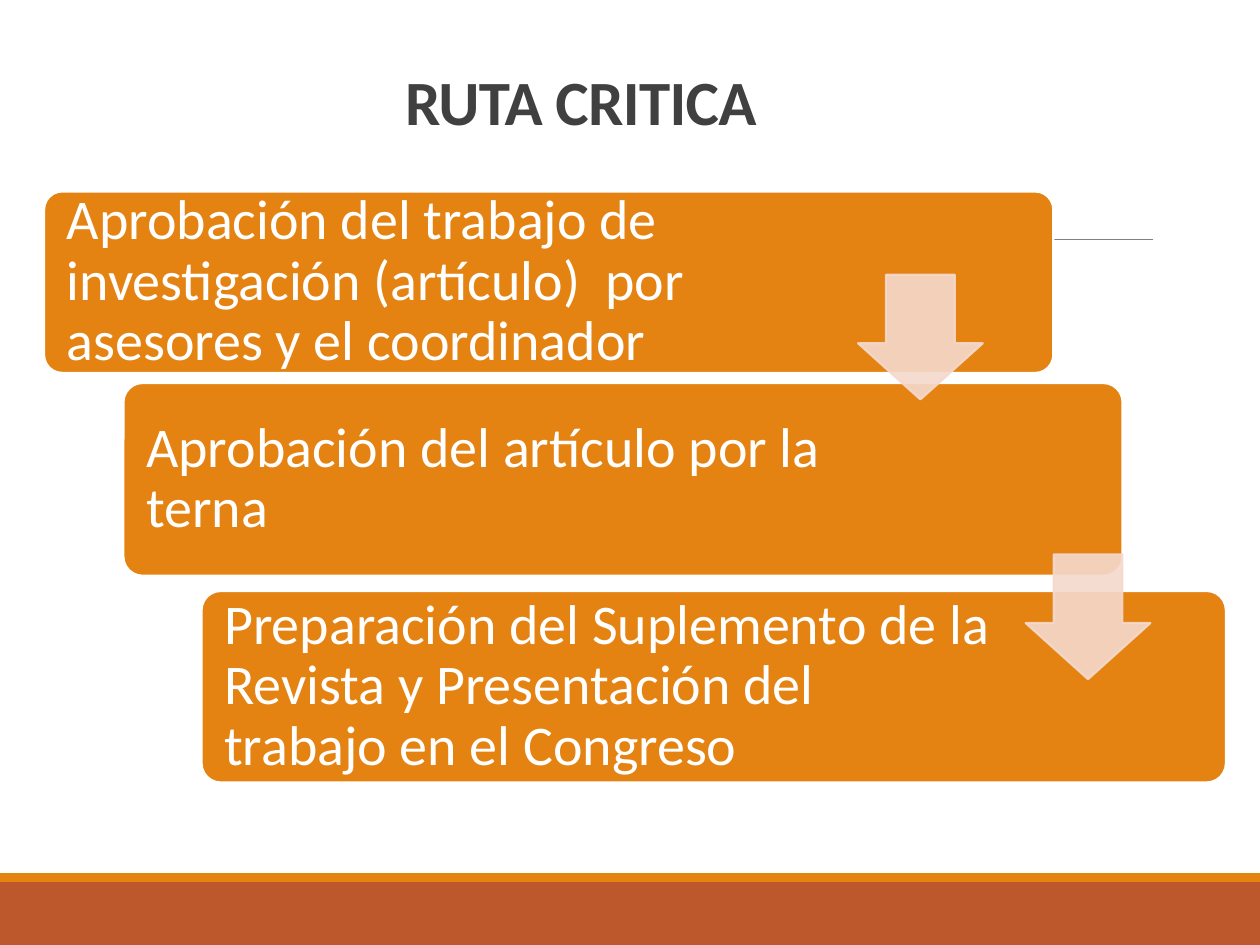
from pptx import Presentation
from pptx.dml.color import RGBColor
from pptx.enum.shapes import MSO_CONNECTOR, MSO_SHAPE
from pptx.enum.text import MSO_ANCHOR, MSO_AUTO_SIZE, PP_ALIGN
from pptx.oxml.ns import qn
from pptx.util import Inches, Pt
from lxml import etree

RECT, ROUNDED, ARROW = MSO_SHAPE.RECTANGLE, MSO_SHAPE.ROUNDED_RECTANGLE, MSO_SHAPE.DOWN_ARROW
STRAIGHT = MSO_CONNECTOR.STRAIGHT
MIDDLE, BOTTOM = MSO_ANCHOR.MIDDLE, MSO_ANCHOR.BOTTOM
CENTER, LEFT = PP_ALIGN.CENTER, PP_ALIGN.LEFT
NO_FIT = MSO_AUTO_SIZE.NONE

COLORS = {
    "orange": "E48312", "rust": "BD582C", "rule": "808080",
    "title": "404040", "white": "FFFFFF", "arrow": "F5D9CC",
}
FONT = "Calibri"
MARGINS = ("margin_left", "margin_top", "margin_right", "margin_bottom")


def rgb(name):
    return RGBColor.from_string(COLORS[name])


class SlideBuilder:
    def __init__(self, slide):
        self.slide = slide
        self.shapes = slide.shapes

    def add_text(self, tf, text, color, frame, para, **font):
        for key, value in frame.items():
            setattr(tf, key, value)
        p = tf.paragraphs[0]
        for key, value in para.items():
            setattr(p, key, value)
        r = p.add_run()
        r.text = text
        for key, value in {"name": FONT, **font}.items():
            setattr(r.font, key, value)
        r.font.color.rgb = rgb(color)
        return r

    def title(self, text, *box):
        sp = self.shapes.title
        sp.left, sp.top, sp.width, sp.height = map(Inches, box)
        frame = {"vertical_anchor": BOTTOM, "word_wrap": True, "auto_size": NO_FIT}
        para = {"alignment": CENTER, "line_spacing": 0.85}
        r = self.add_text(sp.text_frame, text, "title", frame, para, size=Pt(36), bold=True)
        r.font._element.set("spc", "-40")

    def shape(self, kind, box, fill, line=None, adjust=(), opacity=None):
        sp = self.shapes.add_shape(kind, *map(Inches, box))
        sp.shadow.inherit = False
        for i, value in enumerate(adjust):
            sp.adjustments[i] = value
        sp.fill.solid()
        sp.fill.fore_color.rgb = rgb(fill)
        if line:
            sp.line.color.rgb = rgb(line)
            sp.line.width = Pt(1.25)
        else:
            sp.line.fill.background()
        if opacity:
            for color in sp._element.spPr.iter(qn("a:srgbClr")):
                etree.SubElement(color, qn("a:alpha"), val=str(opacity * 1000))
        return sp

    def rule(self, x1, x2, y):
        line = self.shapes.add_connector(STRAIGHT, *map(Inches, (x1, y, x2, y)))
        line.line.color.rgb = rgb("rule")
        line.line.width = Pt(0.5)
        etree.SubElement(line._element.spPr, qn("a:effectLst"))

    def step(self, text, left, top, width, height, text_width):
        self.shape(ROUNDED, (left, top, width, height), "orange", "white", [0.1])
        inset = 0.05
        tb = self.shapes.add_textbox(*map(Inches, (
            left + inset, top + inset, text_width, height - 2 * inset)))
        frame = {"vertical_anchor": MIDDLE, "word_wrap": True, "auto_size": NO_FIT,
                 **dict.fromkeys(MARGINS, Inches(0.13))}
        para = {"alignment": LEFT, "line_spacing": 0.9}
        self.add_text(tb.text_frame, text, "white", frame, para, size=Pt(32))

    def arrow(self, left, top):
        self.shape(ARROW, (left, top, 0.99, 0.99), "arrow", "arrow", (0.55, 0.45), opacity=90)


def main():
    prs = Presentation()
    prs.slide_width, prs.slide_height = Inches(10), Inches(7.5)
    s = SlideBuilder(prs.slides.add_slide(prs.slide_layouts[5]))

    # Footer bands and rule
    s.shape(RECT, (0, 7, 10, 0.5), "rust")
    s.shape(RECT, (0, 6.93, 10, 0.07), "orange")
    s.rule(0.98, 9.15, 1.9)

    s.title("RUTA CRITICA", 0.75, 0.44, 7.72, 0.71)

    # Steps of the route: left, top, width, height, text width
    steps = [
        ("Aprobación del trabajo de investigación (artículo)  por asesores y el coordinador",
         0.35, 1.52, 8.01, 1.44, 6.4),
        ("Aprobación del artículo por la terna", 0.98, 3.04, 7.93, 1.53, 6.18),
        ("Preparación del Suplemento de la Revista y Presentación del trabajo en el Congreso",
         1.6, 4.69, 8.13, 1.52, 6.34),
    ]
    for step in steps:
        s.step(*step)

    # Arrows from each step to the next
    for left, top in ((6.81, 2.18), (8.14, 4.4)):
        s.arrow(left, top)

    prs.save("out.pptx")


if __name__ == "__main__":
    main()
